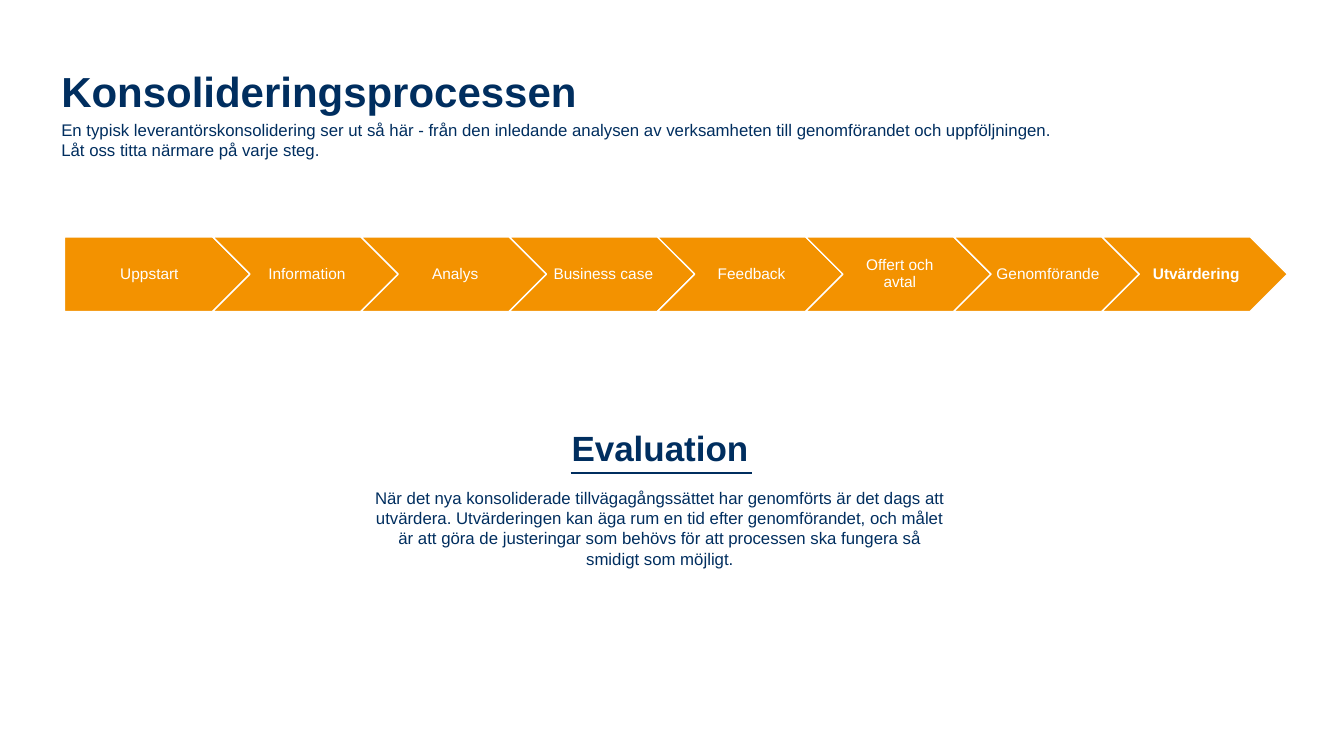
from pptx import Presentation
from pptx.dml.color import RGBColor
from pptx.enum.shapes import MSO_CONNECTOR, MSO_SHAPE
from pptx.enum.text import MSO_ANCHOR, MSO_AUTO_SIZE, PP_ALIGN
from pptx.oxml.ns import qn
from pptx.util import Inches, Pt
from lxml import etree

PENTAGON, CHEVRON = MSO_SHAPE.PENTAGON, MSO_SHAPE.CHEVRON
STRAIGHT = MSO_CONNECTOR.STRAIGHT
MIDDLE = MSO_ANCHOR.MIDDLE
LEFT, CENTER = PP_ALIGN.LEFT, PP_ALIGN.CENTER
GROW = MSO_AUTO_SIZE.SHAPE_TO_FIT_TEXT

COLORS = {"navy": "002E5F", "orange": "F39200", "white": "FFFFFF"}


def color(name):
    return RGBColor.from_string(COLORS[name])


def write(paragraph, text, size, ink, bold=False, align=LEFT):
    paragraph.text = text
    paragraph.alignment = align
    font_format = {"name": "Arial", "size": Pt(size), "bold": bold}
    for key, value in font_format.items():
        setattr(paragraph.font, key, value)
    paragraph.font.color.rgb = color(ink)


prs = Presentation()
prs.slide_width, prs.slide_height = Inches(13.33), Inches(7.5)
slide = prs.slides.add_slide(prs.slide_layouts[6])
shapes = slide.shapes

# Process chain: equal steps, each overlapping the next
steps = ["Uppstart", "Information", "Analys", "Business case", "Feedback",
         "Offert och\vavtal", "Genomförande", "Utvärdering"]
current_step = "Utvärdering"
chain_left, chain_top, step_pitch = 0.64, 2.35, 1.47
step_width, step_height = 1.84, 0.74
step_frame = {"vertical_anchor": MIDDLE, "word_wrap": True,
              "margin_left": Inches(0.05), "margin_right": Inches(0.02),
              "margin_top": Inches(0.03), "margin_bottom": Inches(0.03)}

for i, label in enumerate(steps):
    step = shapes.add_shape(
        CHEVRON if i else PENTAGON,
        Inches(chain_left + i * step_pitch), Inches(chain_top),
        Inches(step_width), Inches(step_height))
    step.shadow.inherit = False
    step.fill.solid()
    step.fill.fore_color.rgb = color("orange")
    step.line.color.rgb = color("white")
    step.line.width = Pt(1)
    for key, value in step_frame.items():
        setattr(step.text_frame, key, value)
    caption = step.text_frame.paragraphs[0]
    write(caption, label, 11, "white", label == current_step, CENTER)
    caption.line_spacing = 0.9

# Description of the current step
evaluation = shapes.add_textbox(
    Inches(3.59), Inches(4.18), Inches(5.91), Inches(1.53)).text_frame
evaluation.word_wrap = True
evaluation.auto_size = GROW
write(evaluation.paragraphs[0], "Evaluation", 25, "navy", True, CENTER)
explanation = evaluation.add_paragraph()
write(explanation,
      "När det nya konsoliderade tillvägagångssättet har genomförts är det "
      "dags att utvärdera. Utvärderingen kan äga rum en tid efter "
      "genomförandet, och målet är att göra de justeringar som behövs för "
      "att processen ska fungera så smidigt som möjligt.",
      12, "navy", align=CENTER)
explanation.space_before = Pt(14)

# Rule under the step name
rule = shapes.add_connector(
    STRAIGHT, Inches(5.66), Inches(4.69), Inches(7.46), Inches(4.69))
rule.line.color.rgb = color("navy")
rule.line.width = Pt(1.25)
etree.SubElement(rule._element.spPr, qn("a:effectLst"))

# Title and introduction
title = shapes.add_textbox(
    Inches(0.51), Inches(0.6), Inches(11.76), Inches(0.74)).text_frame
title.word_wrap = True
write(title.paragraphs[0], "Konsolideringsprocessen", 30, "navy", True)

introduction = shapes.add_textbox(
    Inches(0.51), Inches(1.14), Inches(12.26), Inches(0.5)).text_frame
introduction.word_wrap = True
introduction.auto_size = GROW
write(introduction.paragraphs[0],
      "En typisk leverantörskonsolidering ser ut så här - från den inledande "
      "analysen av verksamheten till genomförandet och uppföljningen.\v"
      "Låt oss titta närmare på varje steg.",
      12, "navy")

prs.save("out.pptx")
